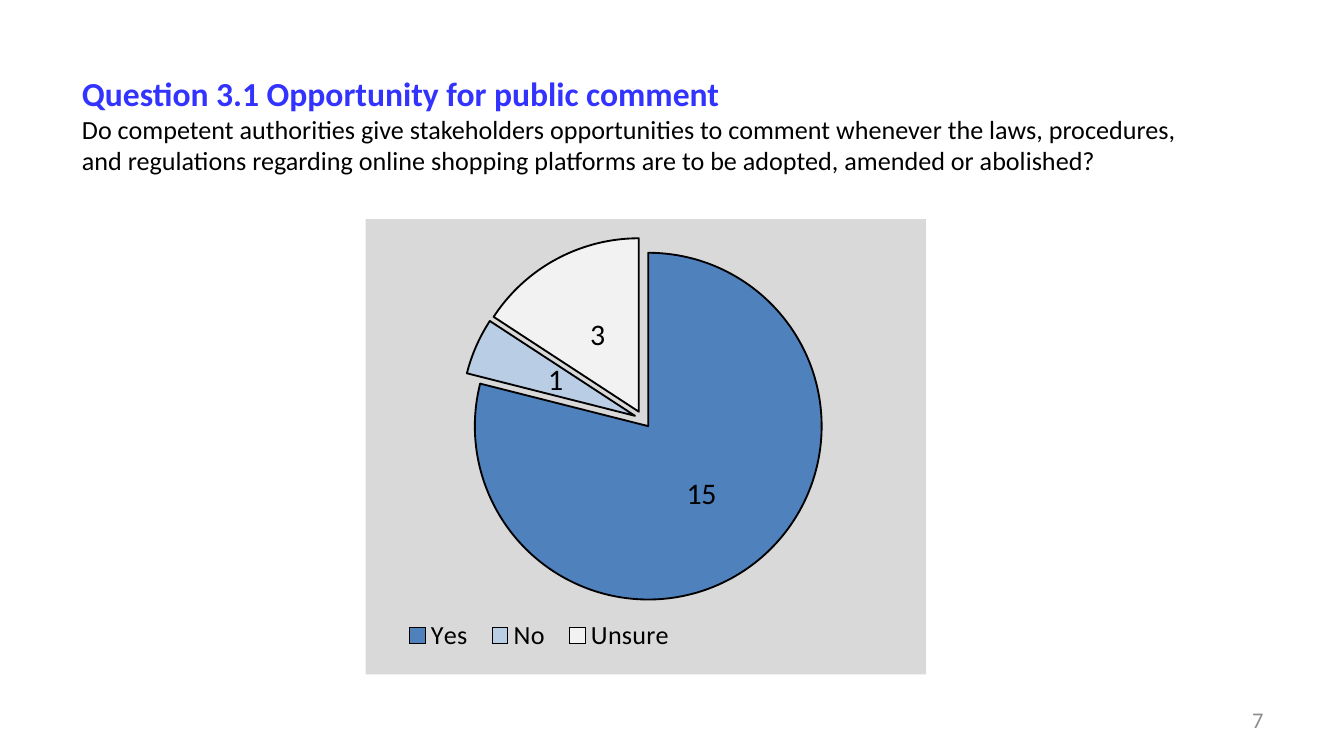
import pptx
import pptx.chart.data
import pptx.dml.color
import pptx.enum.chart
import pptx.enum.text
import pptx.oxml
import pptx.util
from pptx.util import Cm, Pt

FONT = "Calibri"
COLOURS = {
    "heading": "3333FF",
    "text": "000000",
    "number": "8C8C8C",
    "panel": "D9D9D9",
    "Yes": "4F81BD",
    "No": "B9CDE5",
    "Unsure": "F2F2F2",
}
ANSWERS = {"Yes": 15, "No": 1, "Unsure": 3}
CHART_NS = 'xmlns:c="http://schemas.openxmlformats.org/drawingml/2006/chart"'
DRAWING_NS = 'xmlns:a="http://schemas.openxmlformats.org/drawingml/2006/main"'


def style_font(font, size, colour, bold=False):
    font.name = FONT
    font.size = Pt(size)
    font.bold = bold
    font.color.rgb = pptx.dml.color.RGBColor.from_string(COLOURS[colour])


def manual_layout(x, y, width, height, target=""):
    """Return a c:layout element; lengths are fractions of the chart."""
    return pptx.oxml.parse_xml(
        f"<c:layout {CHART_NS}><c:manualLayout>{target}"
        '<c:xMode val="edge"/><c:yMode val="edge"/>'
        f'<c:x val="{x}"/><c:y val="{y}"/><c:w val="{width}"/><c:h val="{height}"/>'
        "</c:manualLayout></c:layout>"
    )


deck = pptx.Presentation()
deck.slide_width = Cm(25.4)
deck.slide_height = Cm(14.29)
page = deck.slides.add_slide(deck.slide_layouts[6])

# Question
box = page.shapes.add_textbox(Cm(1.3), Cm(-0.05), Cm(21.82), Cm(4.8))
box.text_frame.word_wrap = True
box.text_frame.vertical_anchor = pptx.enum.text.MSO_ANCHOR.MIDDLE
para = box.text_frame.paragraphs[0]
span = para.add_run()
span.text = "Question 3.1 Opportunity for public comment"
style_font(span.font, 18, "heading", bold=True)
para.add_line_break()
span = para.add_run()
span.text = (
    "Do competent authorities give stakeholders opportunities to comment "
    "whenever the laws, procedures, and regulations regarding online shopping "
    "platforms are to be adopted, amended or abolished?"
)
style_font(span.font, 14, "text")

# Page number
box = page.shapes.add_textbox(Cm(18.21), Cm(13.23), Cm(5.92), Cm(0.76))
box.text_frame.word_wrap = True
box.text_frame.vertical_anchor = pptx.enum.text.MSO_ANCHOR.MIDDLE
para = box.text_frame.paragraphs[0]
para.alignment = pptx.enum.text.PP_ALIGN.RIGHT
span = para.add_run()
span.text = "7"
style_font(span.font, 12, "number")

# Pie of answers
data = pptx.chart.data.CategoryChartData()
data.categories = list(ANSWERS)
data.add_series("Series 1", list(ANSWERS.values()))
chart = page.shapes.add_chart(
    pptx.enum.chart.XL_CHART_TYPE.PIE_EXPLODED,
    Cm(6.91), Cm(4.14), Cm(10.59), Cm(8.61), data,
).chart
chart.has_title = False
style_font(chart.font, 10, "text")

plot = chart.plots[0]
plot.vary_by_categories = True
series = plot.series[0]
for explosion in series._element.xpath("c:explosion"):
    explosion.set("val", "5")
for index, answer in enumerate(ANSWERS):
    wedge = series.points[index].format
    wedge.fill.solid()
    wedge.fill.fore_color.rgb = pptx.dml.color.RGBColor.from_string(COLOURS[answer])
    wedge.line.width = Pt(1)
    wedge.line.color.rgb = pptx.dml.color.RGBColor.from_string(COLOURS["text"])

labels = series.data_labels
labels.show_value = True
labels.show_percentage = False
labels.position = pptx.enum.chart.XL_LABEL_POSITION.CENTER
style_font(labels.font, 16, "text")

chart.has_legend = True
chart.legend.position = pptx.enum.chart.XL_LEGEND_POSITION.BOTTOM
chart.legend.include_in_layout = False
style_font(chart.legend.font, 14, "text")

# Placement inside the chart
plot_area = chart._chartSpace.chart.plotArea
for layout in plot_area.xpath("c:layout"):
    plot_area.remove(layout)
plot_area.insert(
    0, manual_layout(0.17, 0.04, 0.65, 0.8, '<c:layoutTarget val="inner"/>')
)
legend = chart.legend._element
for layout in legend.xpath("c:layout"):
    legend.remove(layout)
legend.xpath("c:legendPos")[0].addnext(manual_layout(0.05, 0.87, 0.52, 0.09))

# Grey panel behind the pie
panel = pptx.oxml.parse_xml(
    f'<c:spPr {CHART_NS} {DRAWING_NS}><a:solidFill><a:srgbClr val="{COLOURS["panel"]}"/>'
    "</a:solidFill><a:ln><a:noFill/></a:ln></c:spPr>"
)
chart._chartSpace.chart.addnext(panel)

deck.save("out.pptx")
